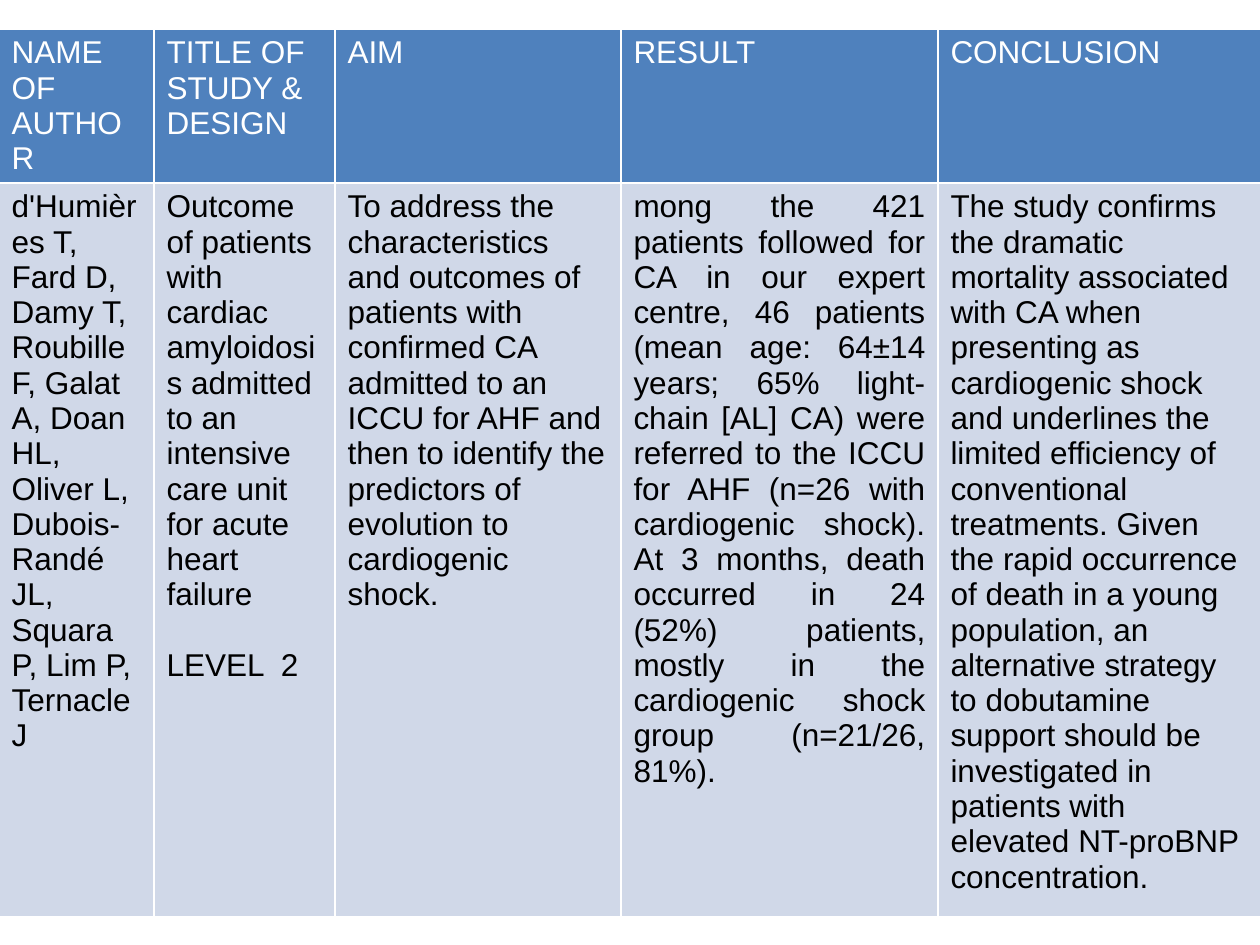
from dataclasses import dataclass

from lxml import etree
from pptx import Presentation
from pptx import util as u
from pptx.dml.color import RGBColor
from pptx.enum import text
from pptx.oxml import ns

SCALE = 914400 / 126
LEFT, TOP = -1, 29
ROW_HEIGHTS = (154, 734)
HEADER_FILL, BODY_FILL = "4F81BD", "D0D8E8"
WHITE, BLACK = "FFFFFF", "000000"


@dataclass(frozen=True)
class Column:
    """One table column: its width, heading and body paragraphs."""

    width: int
    heading: str
    body: tuple[str, ...]
    align: text.PP_ALIGN = text.PP_ALIGN.LEFT


COLUMNS = (
    Column(155, "NAME OF AUTHOR", (
        "d'Humières T, Fard D, Damy T, Roubille F, Galat A, Doan HL, Oliver L, "
        "Dubois-Randé JL, Squara P, Lim P, Ternacle J",)),
    Column(181, "TITLE OF STUDY & DESIGN", (
        "Outcome of patients with cardiac amyloidosis admitted to an intensive "
        "care unit for acute heart failure",
        "LEVEL  2")),
    Column(286, "AIM", (
        "To address the characteristics and outcomes of patients with confirmed CA "
        "admitted to an ICCU for AHF and then to identify the predictors of "
        "evolution to cardiogenic shock.",)),
    Column(317, "RESULT", (
        "mong the 421 patients followed for CA in our expert centre, 46 patients "
        "(mean age: 64±14 years; 65% light-chain [AL] CA) were referred to the ICCU "
        "for AHF (n=26 with cardiogenic shock). At 3 months, death occurred in 24 "
        "(52%) patients, mostly in the cardiogenic shock group (n=21/26, 81%).",),
        text.PP_ALIGN.JUSTIFY),
    Column(323, "CONCLUSION", (
        "The study confirms the dramatic mortality associated with CA when "
        "presenting as cardiogenic shock and underlines the limited efficiency of "
        "conventional treatments. Given the rapid occurrence of death in a young "
        "population, an alternative strategy to dobutamine support should be "
        "investigated in patients with elevated NT-proBNP concentration.",)),
)


def px(n: int) -> u.Emu:
    """Turn pixels into EMU."""
    return u.Emu(round(n * SCALE))


def rgb(value: str) -> RGBColor:
    """Turn a hex string into a colour."""
    return RGBColor.from_string(value)


def write(tf, paragraphs, *, color=BLACK, size=18, font="Arial",
          align=text.PP_ALIGN.LEFT, gap=20.5) -> None:
    """Fill a text frame with formatted paragraphs."""
    for i, line in enumerate(paragraphs):
        p = tf.paragraphs[0] if i == 0 else tf.add_paragraph()
        p.alignment = align
        if i:
            p.space_before = u.Pt(gap)
        r = p.add_run()
        r.text = line
        r.font.size, r.font.name, r.font.bold = u.Pt(size), font, False
        r.font.color.rgb = rgb(color)


def set_borders(cell, color: str = WHITE, width: int = 1) -> None:
    """Draw the same solid line on all four sides of a cell."""
    tc_pr = cell._tc.get_or_add_tcPr()
    for i, side in enumerate(("lnL", "lnR", "lnT", "lnB")):
        ln = etree.Element(ns.qn(f"a:{side}"), w=str(u.Pt(width)))
        fill = etree.SubElement(ln, ns.qn("a:solidFill"))
        etree.SubElement(fill, ns.qn("a:srgbClr"), val=color)
        tc_pr.insert(i, ln)


def fill_cell(cell, paragraphs, fill: str, **fmt) -> None:
    """Give a cell its fill, borders and text."""
    cell.fill.solid()
    cell.fill.fore_color.rgb = rgb(fill)
    set_borders(cell)
    write(cell.text_frame, paragraphs, **fmt)


def add_study_table(slide, columns: tuple[Column, ...]) -> None:
    """Add the study summary table."""
    width = sum(c.width for c in columns)
    table = slide.shapes.add_table(
        len(ROW_HEIGHTS), len(columns), px(LEFT), px(TOP),
        px(width), px(sum(ROW_HEIGHTS))).table
    table.horz_banding = False
    for row, height in zip(table.rows, ROW_HEIGHTS):
        row.height = px(height)
    for i, column in enumerate(columns):
        table.columns[i].width = px(column.width)
        fill_cell(table.cell(0, i), (column.heading,), HEADER_FILL, color=WHITE)
        fill_cell(table.cell(1, i), column.body, BODY_FILL, align=column.align)


def main() -> None:
    """Build and save the slide."""
    prs = Presentation()
    prs.slide_width, prs.slide_height = px(1260), px(945)
    slide = prs.slides.add_slide(prs.slide_layouts[6])
    add_study_table(slide, COLUMNS)
    prs.save("out.pptx")


if __name__ == "__main__":
    main()
